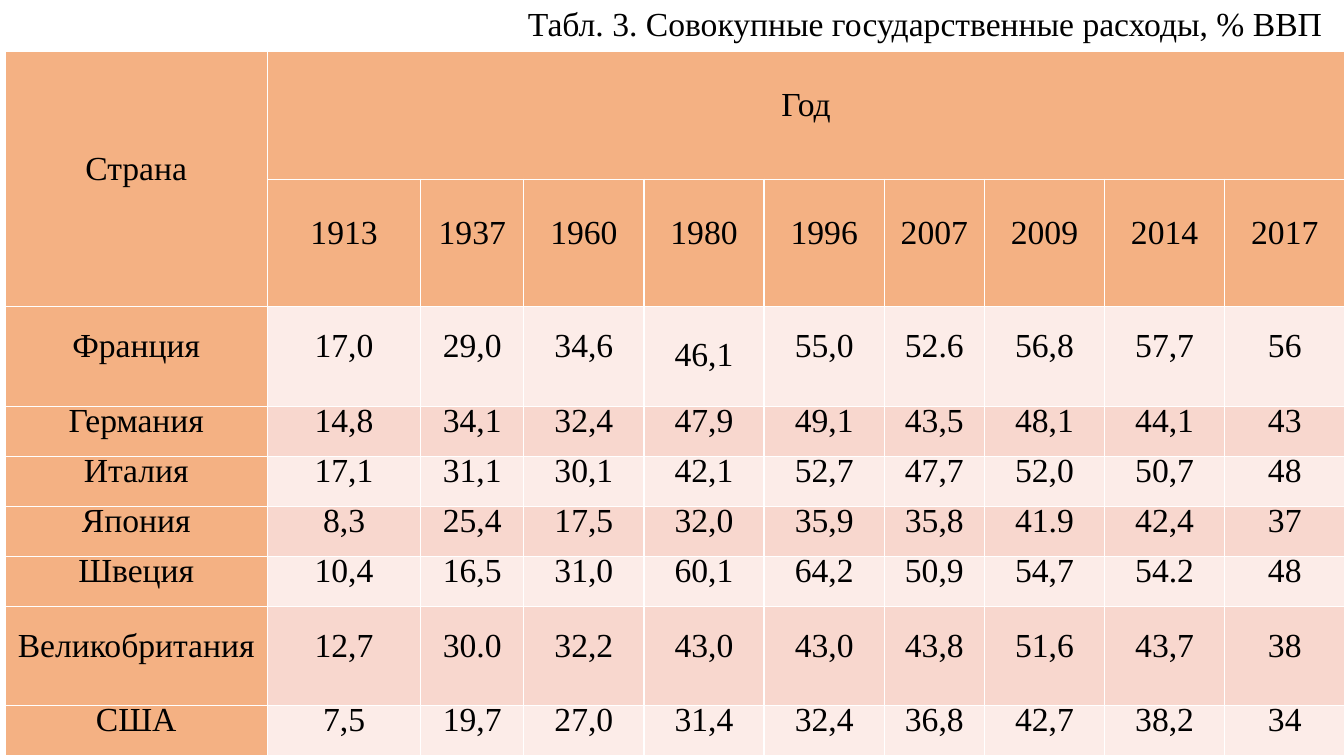
from lxml import etree
from pptx import Presentation
from pptx.dml.color import RGBColor
from pptx.enum.text import MSO_ANCHOR as Anchor, MSO_AUTO_SIZE as Auto, PP_ALIGN as Align
from pptx.oxml.ns import qn
from pptx.util import Inches, Pt

WIDE, HIGH = 13.33, 7.5
LEFT, TOP = 0.05, 0.51
FONT = "Times New Roman"
WHITE, BLACK = "FFFFFF", "000000"
HEAD, BANDS = "F4B183", ("FCECE8", "F8D7CE")

# Shares of the table's width and height
COLS = [262, 153, 103, 120, 120, 120, 100, 120, 120, 120]
ROWS = [128, 128, 100, 50, 50, 50, 50, 100, 50]

CAPTION = "Табл. 3. Совокупные государственные расходы, % ВВП"
YEARS = ["1913", "1937", "1960", "1980", "1996", "2007", "2009", "2014", "2017"]
SPENDING = {
    "Франция": "17,0 29,0 34,6 46,1 55,0 52.6 56,8 57,7 56",
    "Германия": "14,8 34,1 32,4 47,9 49,1 43,5 48,1 44,1 43",
    "Италия": "17,1 31,1 30,1 42,1 52,7 47,7 52,0 50,7 48",
    "Япония": "8,3 25,4 17,5 32,0 35,9 35,8 41.9 42,4 37",
    "Швеция": "10,4 16,5 31,0 60,1 64,2 50,9 54,7 54.2 48",
    "Великобритания": "12,7 30.0 32,2 43,0 43,0 43,8 51,6 43,7 38",
    "США": "7,5 19,7 27,0 31,4 32,4 36,8 42,7 38,2 34",
}


def paint(color, code):
    color.rgb = RGBColor.from_string(code)


def write(frame, text):
    """Set one centred line in the slide's only text style."""
    frame.text = text
    line = frame.paragraphs[0]
    line.alignment = Align.CENTER
    line.line_spacing = Pt(12)
    line.space_before = Pt(0)
    for run in line.runs:
        run.font.name = FONT
        run.font.size = Pt(24)
        run.font.bold = False
        paint(run.font.color, BLACK)


def edge(cell):
    """Draw thin white borders on all four sides."""
    props = cell._tc.get_or_add_tcPr()
    for spot, side in enumerate(("lnL", "lnR", "lnT", "lnB")):
        line = etree.Element(qn(f"a:{side}"), w=str(Pt(1)))
        fill = etree.SubElement(line, qn("a:solidFill"))
        etree.SubElement(fill, qn("a:srgbClr"), val=WHITE)
        props.insert(spot, line)


def fill_cell(cell, text, code):
    cell.margin_left = cell.margin_right = Inches(0.07)
    cell.margin_top = cell.margin_bottom = 0
    cell.vertical_anchor = Anchor.MIDDLE
    cell.fill.solid()
    paint(cell.fill.fore_color, code)
    write(cell.text_frame, text)
    edge(cell)


def share(parts, sizes, total):
    """Split a length among columns or rows."""
    for part, size in zip(parts, sizes):
        yield part, Inches(total * size / sum(sizes))


def add_grid(slide):
    wide, high = WIDE - LEFT + 0.01, HIGH - TOP
    grid = slide.shapes.add_table(
        len(ROWS), len(COLS), Inches(LEFT), Inches(TOP), Inches(wide), Inches(high)
    ).table
    grid.first_row = grid.horz_banding = False
    for col, size in share(grid.columns, COLS, wide):
        col.width = size
    for row, size in share(grid.rows, ROWS, high):
        row.height = size

    lines = [["Страна", "Год"] + [""] * (len(YEARS) - 1), [""] + YEARS]
    lines += [[name] + nums.split() for name, nums in SPENDING.items()]
    for r, line in enumerate(lines):
        for c, text in enumerate(line):
            code = HEAD if r < 2 or c == 0 else BANDS[r % 2]
            fill_cell(grid.cell(r, c), text, code)
    grid.cell(0, 0).merge(grid.cell(1, 0))
    grid.cell(0, 1).merge(grid.cell(0, len(YEARS)))
    # France in 1980 sits a little lower than its row
    grid.cell(2, 1 + YEARS.index("1980")).margin_top = Pt(12)


def add_title(slide):
    title = slide.shapes.title
    title.left, title.top = Inches(5.01), Inches(0.21)
    title.width, title.height = Inches(8.33), Inches(0.31)
    frame = title.text_frame
    write(frame, CAPTION)
    frame.word_wrap = False
    frame.auto_size = Auto.SHAPE_TO_FIT_TEXT
    frame.vertical_anchor = Anchor.TOP


def main():
    deck = Presentation()
    deck.slide_width, deck.slide_height = Inches(WIDE), Inches(HIGH)
    slide = deck.slides.add_slide(deck.slide_layouts[5])
    add_grid(slide)
    add_title(slide)
    deck.save("out.pptx")


if __name__ == "__main__":
    main()
